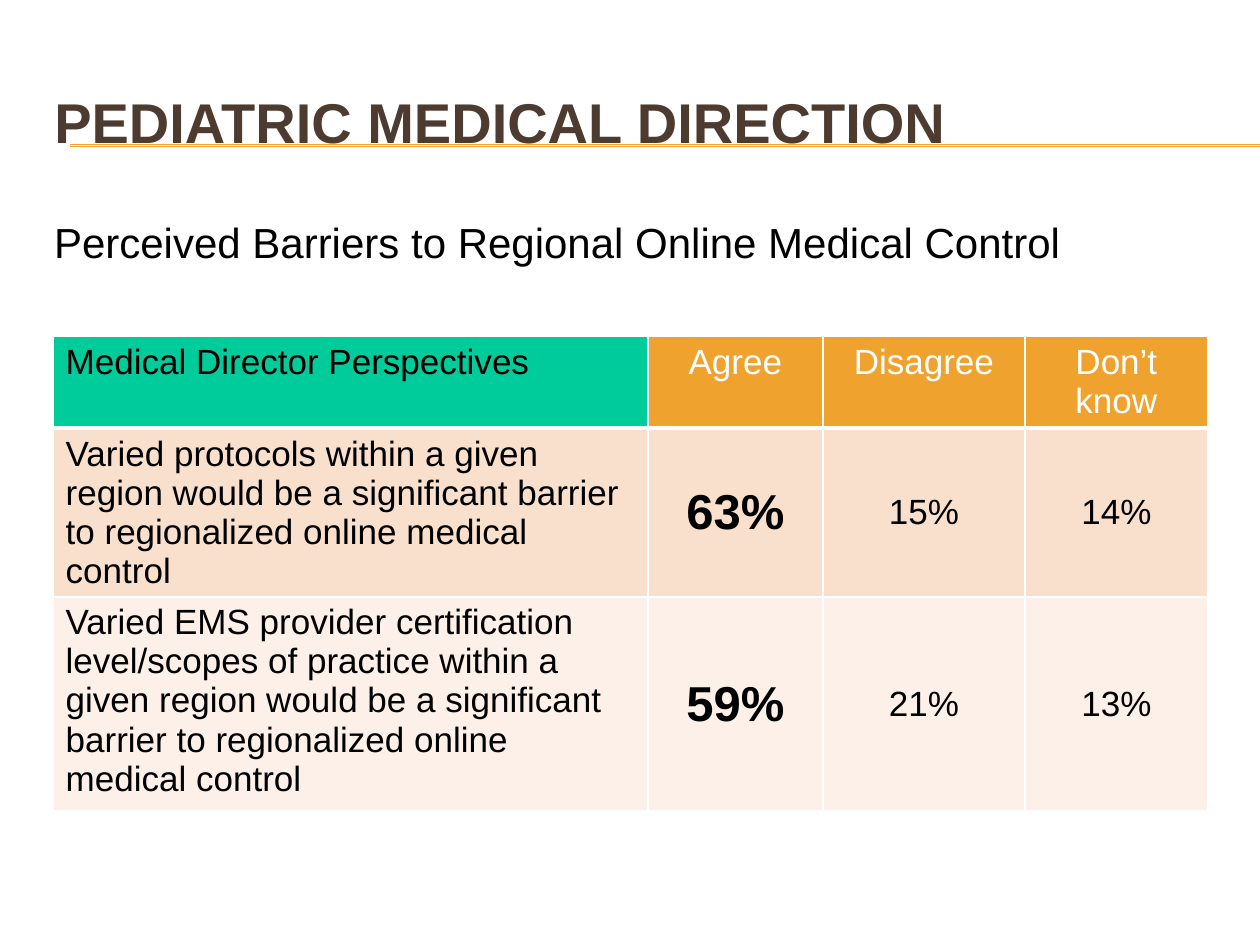
from lxml.etree import SubElement
from pptx import Presentation
from pptx.dml.color import RGBColor
from pptx.enum.shapes import MSO_CONNECTOR as Connector
from pptx.enum.text import MSO_ANCHOR as Anchor, MSO_AUTO_SIZE as AutoSize, PP_ALIGN as Align
from pptx.oxml.ns import qn
from pptx.util import Cm, Pt

# Content
TITLE = "PEDIATRIC MEDICAL DIRECTION"
SUBTITLE = "Perceived Barriers to Regional Online Medical Control"
ROWS = [
    ("Medical Director Perspectives", "Agree", "Disagree", "Don’t know"),
    ("Varied protocols within a given region would be a significant barrier "
     "to regionalized online medical control", "63%", "15%", "14%"),
    ("Varied EMS provider certification level/scopes of practice within a given region "
     "would be a significant barrier to regionalized online medical control",
     "59%", "21%", "13%"),
]

# Format
FONT = "Arial"
BLACK = RGBColor(0x00, 0x00, 0x00)
WHITE = RGBColor(0xFF, 0xFF, 0xFF)
BROWN = RGBColor(0x4E, 0x3B, 0x30)
ORANGE = RGBColor(0xF0, 0xA2, 0x2E)
GREEN = RGBColor(0x00, 0xCC, 0x9B)
ROW_FILLS = [ORANGE, RGBColor(0xF9, 0xE0, 0xCD), RGBColor(0xFC, 0xF0, 0xE8)]
COLUMN_WIDTHS = [11.99, 3.53, 4.07, 3.69]
ROW_HEIGHTS = [1.85, 2.67, 4.32]
RULE_HEIGHTS = [2.92, 2.95]
TEXT_LEFT = 0.84


def write_text(frame, text, size=20, color=BLACK, bold=False, align=Align.LEFT):
    frame.word_wrap = True
    paragraph = frame.paragraphs[0]
    paragraph.alignment = align
    run = paragraph.add_run()
    run.text = text
    font = run.font
    font.name, font.size, font.bold = FONT, Pt(size), bold
    font.color.rgb = color


def add_rule(slide, top):
    rule = slide.shapes.add_connector(Connector.STRAIGHT, Cm(1.42), Cm(top), Cm(25.4), Cm(top))
    rule.line.color.rgb = ORANGE
    rule.line.width = Pt(0.75)
    SubElement(rule.element.spPr, qn("a:effectLst"))


def set_borders(cell, bottom_width):
    properties = cell._tc.get_or_add_tcPr()
    widths = {"a:lnL": 1, "a:lnR": 1, "a:lnT": 1, "a:lnB": bottom_width}
    for position, (tag, width) in enumerate(widths.items()):
        border = SubElement(properties, qn(tag), w=str(Pt(width)))
        fill = SubElement(border, qn("a:solidFill"))
        SubElement(fill, qn("a:srgbClr"), val=str(WHITE))
        properties.insert(position, border)


def add_barrier_table(slide):
    frame = slide.shapes.add_table(len(ROWS), len(COLUMN_WIDTHS), Cm(1.07), Cm(6.78),
                                   Cm(sum(COLUMN_WIDTHS)), Cm(sum(ROW_HEIGHTS)))
    table = frame.table
    for column, width in zip(table.columns, COLUMN_WIDTHS):
        column.width = Cm(width)
    for row, height in zip(table.rows, ROW_HEIGHTS):
        row.height = Cm(height)

    for r, values in enumerate(ROWS):
        for c, text in enumerate(values):
            cell = table.cell(r, c)
            header, label, agree = r == 0, c == 0, r > 0 and c == 1
            cell.fill.solid()
            cell.fill.fore_color.rgb = GREEN if header and label else ROW_FILLS[r]
            cell.vertical_anchor = Anchor.TOP if header or label else Anchor.MIDDLE
            set_borders(cell, bottom_width=3 if header else 1)
            write_text(cell.text_frame, text, size=28 if agree else 20, bold=agree,
                       color=WHITE if header and not label else BLACK,
                       align=Align.LEFT if label else Align.CENTER)


def main():
    presentation = Presentation()
    presentation.slide_width, presentation.slide_height = Cm(25.4), Cm(19.05)
    slide = presentation.slides.add_slide(presentation.slide_layouts[5])

    # Rules, with the title in front of them
    for top in RULE_HEIGHTS:
        add_rule(slide, top)
    title = slide.shapes.title
    title.element.getparent().append(title.element)
    title.left, title.top, title.width, title.height = Cm(TEXT_LEFT), Cm(1.27), Cm(24.13), Cm(2.34)
    title.text_frame.vertical_anchor = Anchor.MIDDLE
    write_text(title.text_frame, TITLE, size=32, color=BROWN, bold=True)

    # Table
    add_barrier_table(slide)

    # Subtitle
    subtitle = slide.shapes.add_textbox(Cm(TEXT_LEFT), Cm(4.24), Cm(21.59), Cm(1.27))
    subtitle.text_frame.auto_size = AutoSize.SHAPE_TO_FIT_TEXT
    write_text(subtitle.text_frame, SUBTITLE, size=24)

    presentation.save("out.pptx")


if __name__ == "__main__":
    main()
